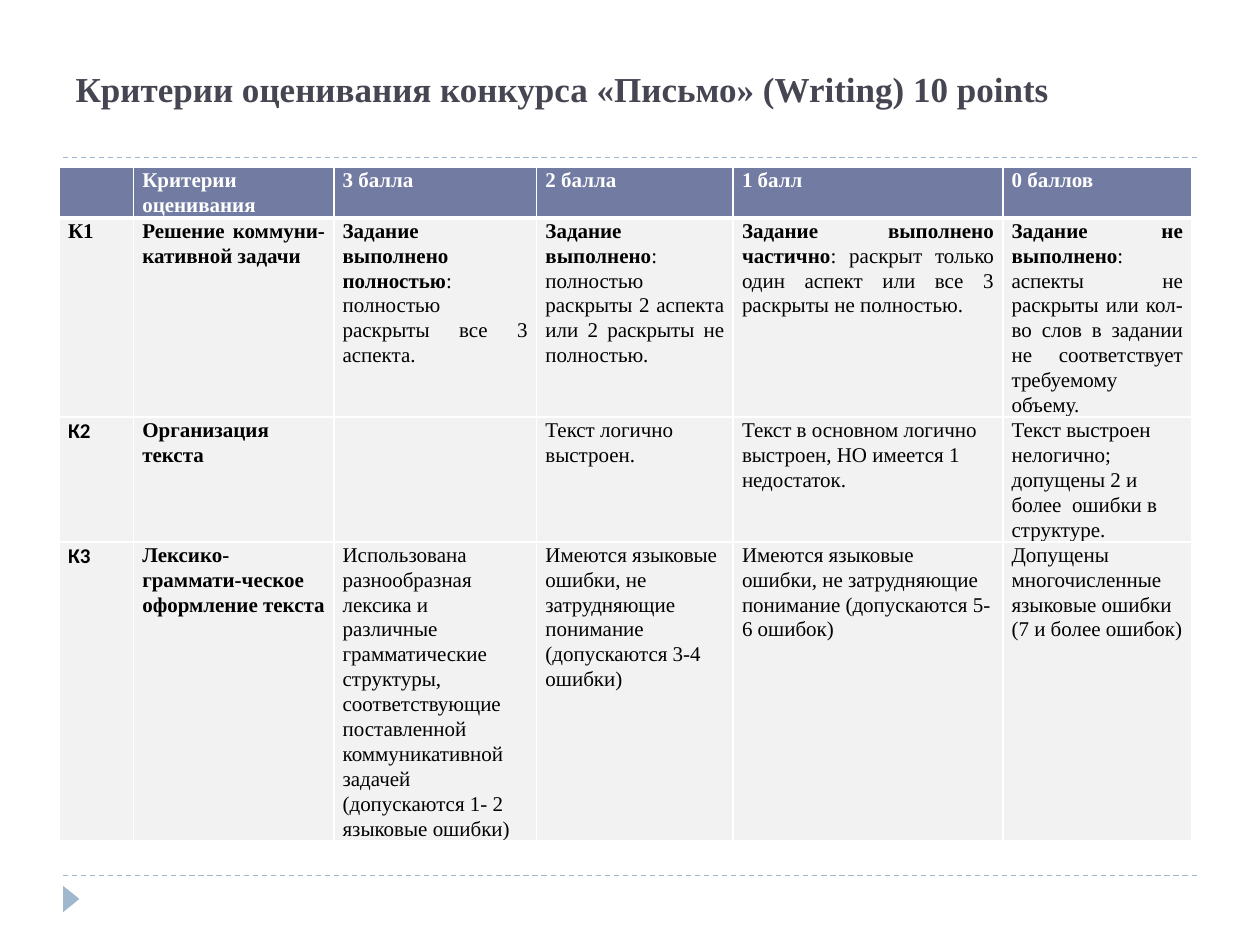
import pptx
import pptx.util
import pptx.dml.color
import pptx.enum.dml
import pptx.enum.shapes
import pptx.enum.text
import pptx.oxml
import pptx.oxml.ns
from lxml import etree

Inches = pptx.util.Inches
Pt = pptx.util.Pt
RGBColor = pptx.dml.color.RGBColor
Align = pptx.enum.text.PP_ALIGN
Anchor = pptx.enum.text.MSO_ANCHOR
qn = pptx.oxml.ns.qn

WHITE = RGBColor(0xFF, 0xFF, 0xFF)
BLACK = RGBColor(0x00, 0x00, 0x00)
TITLE = RGBColor(0x46, 0x46, 0x53)
HEADER = RGBColor(0x72, 0x7C, 0xA3)
BODY = RGBColor(0xF2, 0xF2, 0xF2)
ACCENT = RGBColor(0x9F, 0xB8, 0xCD)

SERIF = "Times New Roman"
SANS = "Calibri"


def bold(text, font=SERIF):
    return text, True, font


def plain(text):
    return text, False, SERIF


HEADINGS = ["", "Критерии оценивания", "3 балла", "2 балла", "1 балл", "0 баллов"]
CRITERIA = [
    [
        [[bold("К1")]],
        [[bold("Решение коммуни-кативной задачи")]],
        [[bold("Задание выполнено полностью"),
          plain(": полностью раскрыты все 3 аспекта. ")]],
        [[bold("Задание выполнено"),
          plain(": полностью раскрыты 2 аспекта или 2 раскрыты не полностью.")]],
        [[bold("Задание выполнено частично"),
          plain(": раскрыт только один аспект или все 3 раскрыты не полностью. ")]],
        [[bold("Задание не выполнено"),
          plain(": аспекты не раскрыты или кол-во слов в задании не соответствует "
                "требуемому объему.")]],
    ],
    [
        [[bold("К2", SANS)]],
        [[bold("Организация текста")]],
        [],
        [[plain("Текст логично выстроен.")]],
        [[plain("Текст в основном логично выстроен, НО имеется 1 недостаток.")]],
        [[plain("Текст выстроен нелогично; допущены 2 и более  ошибки в структуре.")]],
    ],
    [
        [[bold("К3", SANS)]],
        [[bold("Лексико-граммати-ческое оформление текста")]],
        [[plain("Использована разнообразная лексика и различные грамматические "
                "структуры, соответствующие")],
         [plain("поставленной коммуникативной задачей (допускаются 1- 2 языковые ошибки)")]],
        [[plain("Имеются языковые ошибки, не затрудняющие понимание "
                "(допускаются 3-4 ошибки)")]],
        [[plain("Имеются языковые ошибки, не затрудняющие понимание "
                "(допускаются 5-6 ошибок)")]],
        [[plain("Допущены многочисленные языковые ошибки (7 и более ошибок)")]],
    ],
]
COLUMN_WIDTHS = [0.59, 1.59, 1.61, 1.56, 2.14, 1.5]
ROW_HEIGHTS = [0.4, 1.58, 0.99, 2.36]


class SlideBuilder:
    def __init__(self, presentation):
        self.slide = presentation.slides.add_slide(presentation.slide_layouts[5])
        self.text_size = 12
        self.title_size = 20

    def add_run(self, paragraph, content, size, color):
        text, is_bold, font = content
        run = paragraph.add_run()
        run.text = text
        run.font.name = font
        run.font.size = Pt(size)
        run.font.bold = is_bold
        run.font.color.rgb = color

    def divider(self, top):
        line = self.slide.shapes.add_connector(
            pptx.enum.shapes.MSO_CONNECTOR.STRAIGHT,
            Inches(0.5), Inches(top), Inches(9.5), Inches(top))
        line.line.color.rgb = ACCENT
        line.line.width = Pt(0.75)
        line.line.dash_style = pptx.enum.dml.MSO_LINE.DASH
        etree.SubElement(line._element.spPr, qn("a:effectLst"))

    def marker(self):
        shape = self.slide.shapes.add_shape(
            pptx.enum.shapes.MSO_SHAPE.ISOSCELES_TRIANGLE,
            Inches(0.46), Inches(7.07), Inches(0.21), Inches(0.13))
        shape.rotation = 90
        shape.shadow.inherit = False
        shape.fill.solid()
        shape.fill.fore_color.rgb = ACCENT
        shape.line.fill.background()

    def title(self, text):
        shape = self.slide.shapes.title
        shape.left, shape.top = Inches(0.5), Inches(0.17)
        shape.width, shape.height = Inches(9), Inches(0.75)
        frame = shape.text_frame
        frame.word_wrap = True
        frame.vertical_anchor = Anchor.BOTTOM
        paragraph = frame.paragraphs[0]
        paragraph.alignment = Align.LEFT
        self.add_run(paragraph, bold(text), self.title_size, TITLE)

    def borders(self, cell, top, bottom):
        properties = cell._tc.get_or_add_tcPr()
        widths = {"lnL": 1, "lnR": 1, "lnT": top, "lnB": bottom}
        for index, (side, width) in enumerate(widths.items()):
            line = pptx.oxml.parse_xml(
                f'<a:{side} {pptx.oxml.ns.nsdecls("a")} w="{Pt(width)}">'
                f'<a:solidFill><a:srgbClr val="{WHITE}"/></a:solidFill></a:{side}>')
            properties.insert(index, line)

    def cell(self, cell, paragraphs, fill, color, alignment):
        cell.fill.solid()
        cell.fill.fore_color.rgb = fill
        cell.margin_left = cell.margin_right = Inches(0.07)
        cell.margin_top = cell.margin_bottom = 0
        frame = cell.text_frame
        for index, runs in enumerate(paragraphs):
            paragraph = frame.add_paragraph() if index else frame.paragraphs[0]
            paragraph.alignment = alignment
            paragraph.line_spacing = 1.07
            for content in runs:
                self.add_run(paragraph, content, self.text_size, color)

    def table(self, headings, criteria):
        rows = [[[[bold(text)]] if text else [] for text in headings]] + criteria
        table = self.slide.shapes.add_table(
            len(rows), len(headings), Inches(0.47), Inches(1.33),
            Inches(sum(COLUMN_WIDTHS)), Inches(sum(ROW_HEIGHTS))).table
        table.first_row = table.horz_banding = False
        for column, width in zip(table.columns, COLUMN_WIDTHS):
            column.width = Inches(width)
        for row, height in zip(table.rows, ROW_HEIGHTS):
            row.height = Inches(height)
        for row_index, row in enumerate(rows):
            is_header = row_index == 0
            fill, color = (HEADER, WHITE) if is_header else (BODY, BLACK)
            alignment = Align.JUSTIFY if row_index == 1 else Align.LEFT
            for column_index, paragraphs in enumerate(row):
                cell = table.cell(row_index, column_index)
                self.cell(cell, paragraphs, fill, color, alignment)
                self.borders(cell, 3 if row_index == 1 else 1, 3 if is_header else 1)


def main():
    presentation = pptx.Presentation()
    presentation.slide_width = Inches(10)
    presentation.slide_height = Inches(7.5)
    builder = SlideBuilder(presentation)
    for top in (6.95, 1.25):
        builder.divider(top)
    builder.marker()
    builder.title("Критерии оценивания конкурса «Письмо» (Writing) 10 points")
    builder.table(HEADINGS, CRITERIA)
    presentation.save("out.pptx")


if __name__ == "__main__":
    main()
